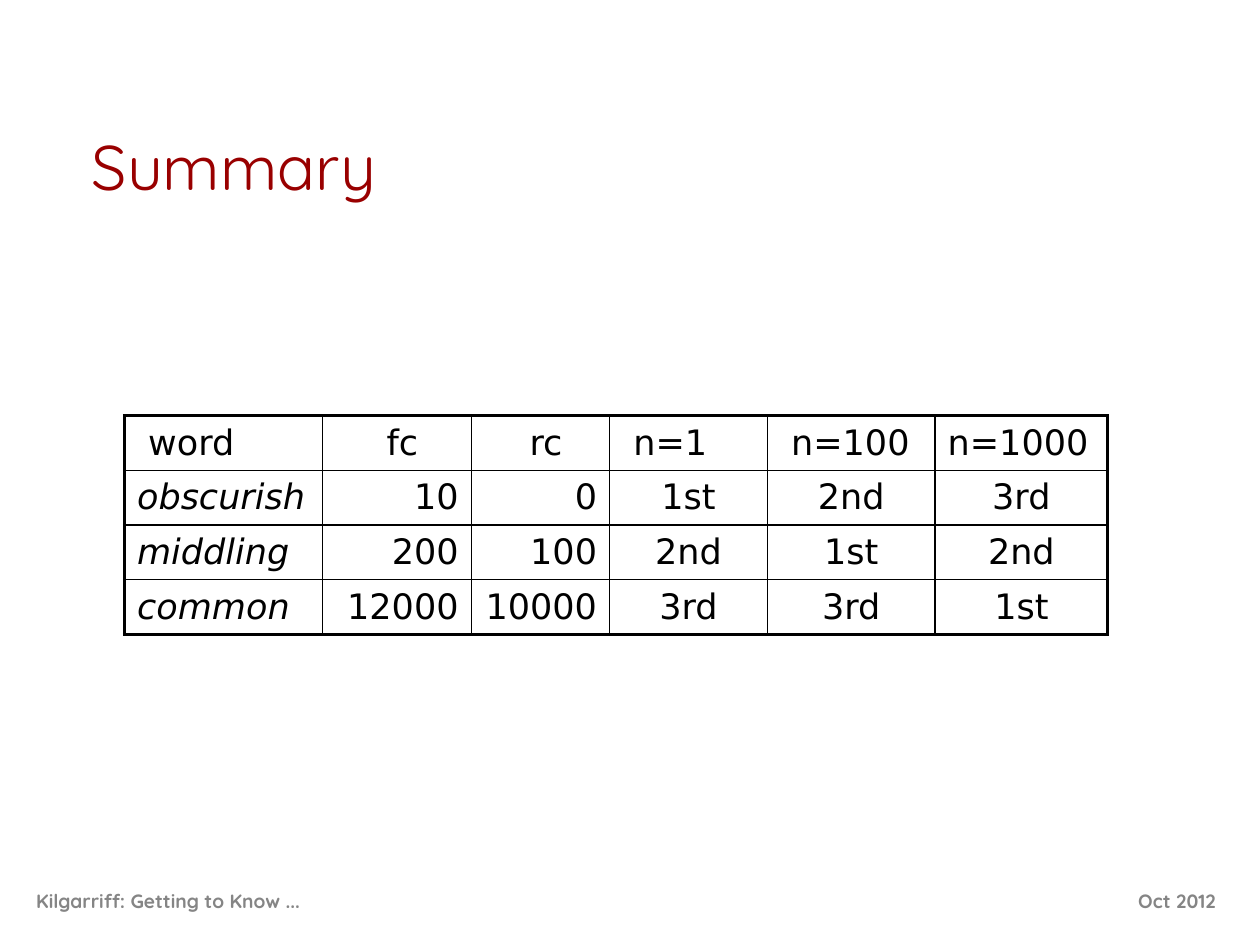
from dataclasses import dataclass

from lxml import etree
from pptx import Presentation
from pptx.dml.color import RGBColor
from pptx.enum.text import MSO_ANCHOR, PP_ALIGN
from pptx.oxml.ns import qn
from pptx.util import Cm, Pt

LEFT, CENTER, RIGHT = PP_ALIGN.LEFT, PP_ALIGN.CENTER, PP_ALIGN.RIGHT
MIDDLE, BOTTOM = MSO_ANCHOR.MIDDLE, MSO_ANCHOR.BOTTOM


@dataclass(frozen=True)
class Theme:
    heading_font: str = "Quicksand"
    table_font: str = "DejaVu Sans"
    title_color: str = "990000"
    footer_color: str = "858585"
    ink: str = "000000"
    title_size: float = 36
    table_size: float = 20
    footer_size: float = 11
    outer_line: float = 2.25
    inner_line: float = 1


def write(frame, text, *, font, size, color, align=LEFT, bold=False, italic=False):
    paragraph = frame.paragraphs[0]
    paragraph.alignment = align
    run = paragraph.add_run()
    run.text = text
    run.font.name = font
    run.font.size = Pt(size)
    run.font.bold = bold
    run.font.italic = italic
    run.font.color.rgb = RGBColor.from_string(color)


def set_borders(cell, widths, color):
    """Draw cell edges; widths are points for left, right, top, bottom."""
    properties = cell._tc.get_or_add_tcPr()
    for position, (side, width) in enumerate(zip("LRTB", widths)):
        line = etree.Element(qn(f"a:ln{side}"), w=str(Pt(width)))
        fill = etree.SubElement(line, qn("a:solidFill"))
        etree.SubElement(fill, qn("a:srgbClr"), val=color)
        properties.insert(position, line)


class SlideBuilder:
    def __init__(self, slide, theme):
        self.slide = slide
        self.theme = theme

    def text(self, content, left, top, width, height, anchor=MIDDLE, **style):
        box = self.slide.shapes.add_textbox(Cm(left), Cm(top), Cm(width), Cm(height))
        box.text_frame.word_wrap = True
        box.text_frame.vertical_anchor = anchor
        write(box.text_frame, content, font=self.theme.heading_font, **style)

    def title(self, content):
        self.text(content, 1.6, 0.84, 22.22, 3.38, anchor=BOTTOM,
                  size=self.theme.title_size, color=self.theme.title_color)

    def footer(self, content, left, width, align=LEFT):
        self.text(content, left, 17.65, width, 1.02, align=align, bold=True,
                  size=self.theme.footer_size, color=self.theme.footer_color)

    def table(self, rows, left, top, column_widths, row_height, header_aligns, body_aligns):
        theme = self.theme
        last_row, last_column = len(rows) - 1, len(column_widths) - 1
        table = self.slide.shapes.add_table(
            len(rows), len(column_widths), Cm(left), Cm(top),
            Cm(sum(column_widths)), Cm(row_height * len(rows))).table
        table.first_row = table.horz_banding = False
        for column, width in zip(table.columns, column_widths):
            column.width = Cm(width)
        for r, values in enumerate(rows):
            aligns = body_aligns if r else header_aligns
            for c, (value, align) in enumerate(zip(values, aligns)):
                cell = table.cell(r, c)
                cell.vertical_anchor = MIDDLE
                cell.fill.background()
                write(cell.text_frame, value, font=theme.table_font,
                      size=theme.table_size, color=theme.ink, align=align,
                      italic=r > 0 and c == 0)
                on_edge = (c == 0, c == last_column, r == 0, r == last_row)
                set_borders(cell, [theme.outer_line if edge else theme.inner_line
                                   for edge in on_edge], theme.ink)


def main():
    presentation = Presentation()
    presentation.slide_width, presentation.slide_height = Cm(25.4), Cm(19.05)
    blank_layout = presentation.slide_layouts[6]
    summary = SlideBuilder(presentation.slides.add_slide(blank_layout), Theme())

    summary.footer("Oct 2012 ", 19.99, 4.88, align=RIGHT)
    summary.footer("Kilgarriff: Getting to Know ...", 0.48, 16.69)
    summary.title("Summary")

    rankings = [
        (" word", " fc", " rc", " n=1", " n=100", "n=1000"),
        ("obscurish", "10", "0", "1st", "2nd", "3rd"),
        ("middling", "200", "100", "2nd", "1st", "2nd"),
        ("common", "12000", "10000", "3rd", "3rd", "1st"),
    ]
    summary.table(
        rankings, left=2.51, top=8.38, row_height=1.1,
        column_widths=[3.99, 3, 2.79, 3.18, 3.38, 3.48],
        header_aligns=[LEFT, CENTER, CENTER, LEFT, LEFT, LEFT],
        body_aligns=[LEFT, RIGHT, RIGHT, CENTER, CENTER, CENTER])

    presentation.save("out.pptx")


if __name__ == "__main__":
    main()
